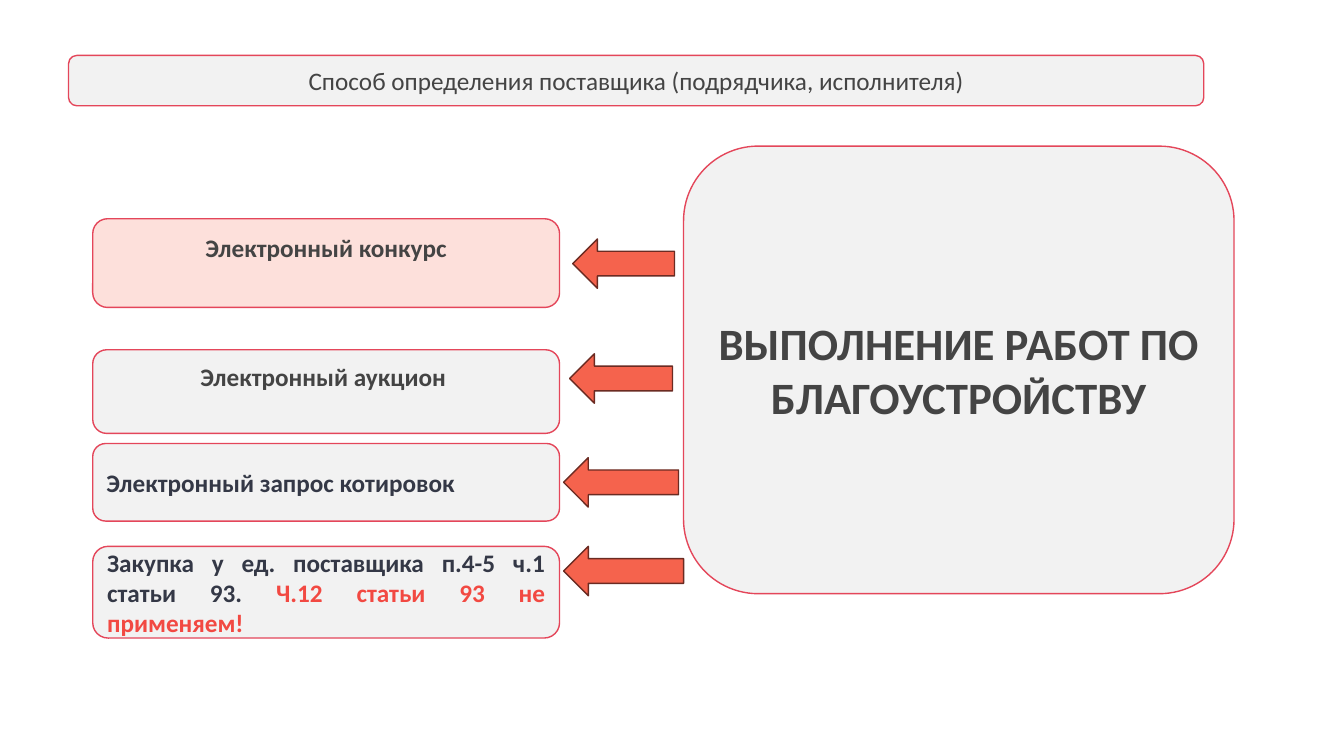
from pptx import Presentation
from pptx.dml.color import RGBColor
from pptx.enum.shapes import MSO_SHAPE
from pptx.enum.text import MSO_ANCHOR, PP_ALIGN
from pptx.util import Inches, Pt

ROUNDED = MSO_SHAPE.ROUNDED_RECTANGLE
LEFT_ARROW = MSO_SHAPE.LEFT_ARROW
MIDDLE = MSO_ANCHOR.MIDDLE
CENTER = PP_ALIGN.CENTER
JUSTIFY = PP_ALIGN.JUSTIFY

FONT = "Calibri"
GREY, PINK, CORAL = "F2F2F2", "FDE0DB", "F5634D"
BORDER, ARROW_BORDER = "E4465A", "6B2B22"
TEXT, DARK_TEXT, RED_TEXT = "444444", "343846", "F24942"

METHOD_LEFT, METHOD_WIDTH = 0.92, 4.63
ARROW_HEIGHT = 0.49
RAISED = 0.35  # bottom inset that lifts a label by half a line

# top, height, fill, alignment, bottom inset, spans of (text, colour)
METHODS = [
    (2.17, 0.88, PINK, CENTER, RAISED, [("Электронный конкурс", TEXT)]),
    (3.47, 0.83, GREY, CENTER, RAISED, [("Электронный аукцион ", TEXT)]),
    (4.4, 0.77, GREY, JUSTIFY, 0.05, [("Электронный запрос котировок", DARK_TEXT)]),
    (5.42, 0.91, GREY, JUSTIFY, 0.05, [
        ("Закупка у ед. поставщика п.4-5 ч.1 статьи 93. ", DARK_TEXT),
        ("Ч.12 статьи 93 не применяем!", RED_TEXT),
    ]),
]

# left, top, width
ARROWS = [(5.68, 2.37, 1.01), (5.65, 3.51, 1.02), (5.59, 4.54, 1.14), (5.59, 5.42, 1.19)]


def color(value):
    return RGBColor.from_string(value)


def add_figure(page, kind, place, fill, border):
    figure = page.shapes.add_shape(kind, *(Inches(length) for length in place))
    figure.shadow.inherit = False
    figure.fill.solid()
    figure.fill.fore_color.rgb = color(fill)
    figure.line.color.rgb = color(border)
    figure.line.width = Pt(1)
    return figure


def add_box(page, place, spans, fill=GREY, size=18, bold=True, align=CENTER, bottom=0.05):
    """Add a rounded box with one paragraph made of (text, colour) spans."""
    box = add_figure(page, ROUNDED, place, fill, BORDER)
    frame = box.text_frame
    frame.word_wrap = True
    frame.vertical_anchor = MIDDLE
    frame.margin_bottom = Inches(bottom)
    para = frame.paragraphs[0]
    para.alignment = align
    for text, text_color in spans:
        span = para.add_run()
        span.text = text
        span.font.name = FONT
        span.font.size = Pt(size)
        span.font.bold = bold
        span.font.color.rgb = color(text_color)


def main():
    deck = Presentation()
    deck.slide_width, deck.slide_height = Inches(13.33), Inches(7.5)
    page = deck.slides.add_slide(deck.slide_layouts[6])

    add_box(page, (0.68, 0.55, 11.26, 0.5),
            [("Способ определения поставщика (подрядчика, исполнителя)", TEXT)], bold=False)
    add_box(page, (6.78, 1.45, 5.46, 4.44),
            [("ВЫПОЛНЕНИЕ РАБОТ ПО БЛАГОУСТРОЙСТВУ", TEXT)], size=32)

    for top, height, fill, align, bottom, spans in METHODS:
        add_box(page, (METHOD_LEFT, top, METHOD_WIDTH, height), spans,
                fill=fill, align=align, bottom=bottom)
    for left, top, width in ARROWS:
        add_figure(page, LEFT_ARROW, (left, top, width, ARROW_HEIGHT), CORAL, ARROW_BORDER)

    deck.save("out.pptx")


if __name__ == "__main__":
    main()
